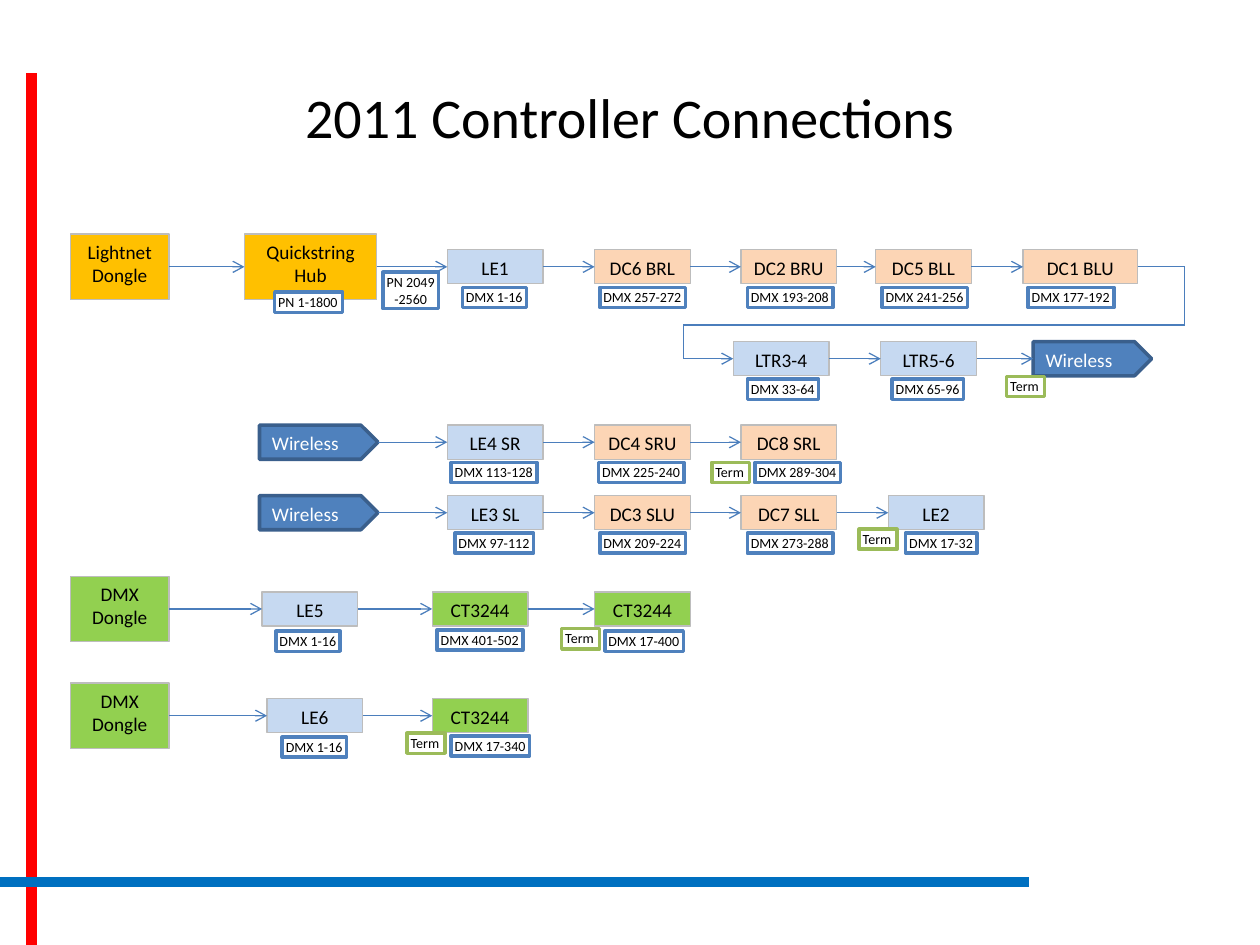
from dataclasses import dataclass
from itertools import pairwise
from typing import Optional

from lxml.etree import SubElement
from pptx import Presentation
from pptx.dml.color import RGBColor as Rgb
from pptx.enum.shapes import MSO_CONNECTOR as Connector, MSO_SHAPE as Preset
from pptx.enum.text import MSO_ANCHOR as Anchor, MSO_AUTO_SIZE as AutoSize, PP_ALIGN as Align
from pptx.oxml.ns import qn
from pptx.util import Pt

COLOURS = {
    "red": "FF0000", "rule": "0070C0", "black": "000000", "white": "FFFFFF",
    "amber": "FFC000", "lime": "92D050", "sky": "C6D9F1", "peach": "FCD5B5",
    "blue": "4F81BD", "navy": "3A5F8C", "grey": "BDBDBD",
    "olive": "9BBB59", "link": "4B7EBC",
}
FONT = "Calibri"
DONGLE_LEFT, FIRST, SECOND, THIRD, FOURTH = 40.3, 255.6, 339.8, 423.4, 507.6
RIGHT_SIDE, LEFT_SIDE = 3, 1


@dataclass
class Node:
    text: str
    left: float
    colour: str
    width: float = 54.7
    height: float = 19.5


@dataclass
class Tag:
    text: str
    left: float
    drop: float = 11.7
    width: Optional[float] = None
    height: float = 11.5


@dataclass
class Row:
    middle: float
    nodes: list[Node]
    tags: list[Tag]


def dongle(text: str, colour: str) -> Node:
    return Node(text, DONGLE_LEFT, colour, 56.2, 37.5)


def wireless(left: float) -> Node:
    return Node("Wireless", left, "blue", 67.7)


def term(left: float, drop: float) -> Tag:
    return Tag("Term", left, drop, 21.6)


ROWS = [
    Row(152.5,
        [dongle("Lightnet\nDongle", "amber"),
         Node("Quickstring\nHub", 139.7, "amber", 75.6, 37.5),
         Node("LE1", FIRST, "sky"), Node("DC6 BRL", SECOND, "peach"),
         Node("DC2 BRU", THIRD, "peach"), Node("DC5 BLL", 500.4, "peach"),
         Node("DC1 BLU", 584.6, "peach", 65.5)],
        [Tag("PN 1-1800", 157, 14.5, 38.9),
         Tag("PN 2049\n-2560", 218.9, 3, 31.7, 20.9),
         Tag("DMX 1-16", 264.2), Tag("DMX 257-272", 342.7),
         Tag("DMX 193-208", 427), Tag("DMX 241-256", 504),
         Tag("DMX 177-192", 587.5)]),
    Row(205,
        [Node("LTR3-4", 419, "sky"), Node("LTR5-6", 503.3, "sky"), wireless(590.4)],
        [Tag("DMX 33-64", 427), Tag("DMX 65-96", 509.8), term(575.3, 10.2)]),
    Row(252.7,
        [wireless(148.3), Node("LE4 SR", FIRST, "sky"),
         Node("DC4 SRU", SECOND, "peach"), Node("DC8 SRL", THIRD, "peach")],
        [Tag("DMX 113-128", 257.8), Tag("DMX 225-240", 342),
         term(406.8, 11.5), Tag("DMX 289-304", 431.3)]),
    Row(293,
        [wireless(148.3), Node("LE3 SL", FIRST, "sky"),
         Node("DC3 SLU", SECOND, "peach"), Node("DC7 SLL", THIRD, "peach"),
         Node("LE2", FOURTH, "sky")],
        [Tag("DMX 97-112", 260), Tag("DMX 209-224", 342.7),
         Tag("DMX 273-288", 427), term(491, 9.4), Tag("DMX 17-32", 517.5)]),
    Row(348,
        [dongle("DMX\nDongle", "lime"), Node("LE5", 149.8, "sky"),
         Node("CT3244", 247, "lime"), Node("CT3244", SECOND, "lime")],
        [Tag("DMX 1-16", 157.7, 12.7), Tag("DMX 401-502", 249.8, 12),
         term(321, 11.3), Tag("DMX 17-400", 345.6, 12.7)]),
    Row(409,
        [dongle("DMX\nDongle", "lime"), Node("LE6", 152.6, "sky"),
         Node("CT3244", 247, "lime")],
        [Tag("DMX 1-16", 161.3, 12.2), term(232.6, 10),
         Tag("DMX 17-340", 257.8, 11.5)]),
]


def rgb(name: str) -> Rgb:
    return Rgb.from_string(COLOURS[name])


def write(shape, text: str, *, size: float, colour: str = "black",
          align=Align.CENTER, anchor=Anchor.TOP) -> None:
    frame = shape.text_frame
    frame.vertical_anchor = anchor
    for index, line in enumerate(text.split("\n")):
        para = frame.add_paragraph() if index else frame.paragraphs[0]
        para.alignment = align
        span = para.add_run()
        span.text = line
        span.font.name = FONT
        span.font.size = Pt(size)
        span.font.color.rgb = rgb(colour)


def draw_box(slide, preset, left: float, top: float, width: float, height: float,
             *, fill: str, edge: str, weight: float):
    box = slide.shapes.add_shape(preset, Pt(left), Pt(top), Pt(width), Pt(height))
    box.shadow.inherit = False
    box.fill.solid()
    box.fill.fore_color.rgb = rgb(fill)
    box.line.color.rgb = rgb(edge)
    box.line.width = Pt(weight)
    return box


def draw_line(slide, start: tuple, end: tuple, *, colour: str = "link",
              weight: float = 0.75, arrow: bool = False):
    line = slide.shapes.add_connector(Connector.STRAIGHT, *map(Pt, start + end))
    line.line.color.rgb = rgb(colour)
    line.line.width = Pt(weight)
    properties = line._element.spPr
    if arrow:
        SubElement(properties.find(qn("a:ln")), qn("a:tailEnd"), type="arrow")
    SubElement(properties, qn("a:effectLst"))
    return line


def draw_node(slide, node: Node, middle: float):
    is_wireless = node.text == "Wireless"
    box = draw_box(slide, Preset.PENTAGON if is_wireless else Preset.RECTANGLE,
                   node.left, middle - node.height / 2, node.width, node.height,
                   fill=node.colour, edge="navy" if is_wireless else "grey",
                   weight=2 if is_wireless else 0.75)
    write(box, node.text, size=11, colour="white" if is_wireless else "black",
          align=Align.LEFT if is_wireless else Align.CENTER)
    return box


def draw_tag(slide, tag: Tag, middle: float) -> None:
    width = tag.width or 4.1 * len(tag.text) + 3.9
    box = draw_box(slide, Preset.RECTANGLE, tag.left, middle + tag.drop, width, tag.height,
                   fill="white", edge="olive" if tag.text == "Term" else "blue", weight=2)
    frame = box.text_frame
    frame.margin_left = frame.margin_right = Pt(2)
    frame.margin_top = frame.margin_bottom = Pt(0.75)
    frame.word_wrap = False
    frame.auto_size = AutoSize.SHAPE_TO_FIT_TEXT
    write(box, tag.text, size=8, align=Align.CENTER if "\n" in tag.text else Align.LEFT)


def draw_chain(slide, row: Row) -> list:
    boxes = [draw_node(slide, node, row.middle) for node in row.nodes]
    for source, target in pairwise(boxes):
        link = draw_line(slide, (0, 0), (1, 1), arrow=True)
        link.begin_connect(source, RIGHT_SIDE)
        link.end_connect(target, LEFT_SIDE)
    return boxes


def draw_return(slide, source, target) -> None:
    right, left, turn = 677, 390.5, 185.8
    top, bottom = ROWS[0].middle, ROWS[1].middle
    points = [(650.1, top), (right, top), (right, turn),
              (left, turn), (left, bottom), (419, bottom)]
    steps = list(pairwise(points))
    lines = [draw_line(slide, *step, arrow=step == steps[-1]) for step in steps]
    lines[0].begin_connect(source, RIGHT_SIDE)
    lines[-1].end_connect(target, LEFT_SIDE)


def main() -> None:
    deck = Presentation()
    deck.slide_width, deck.slide_height = Pt(720), Pt(540)
    page = deck.slides.add_slide(deck.slide_layouts[5])
    draw_line(page, (18, 42), (18, 540), colour="red", weight=6)
    draw_line(page, (0, 504), (588, 504), colour="rule", weight=6)

    title = page.shapes.title
    title.left, title.top, title.width, title.height = map(Pt, (36, 21.6, 648, 90))
    write(title, "2011 Controller Connections", size=32, anchor=Anchor.MIDDLE)

    chains = [draw_chain(page, row) for row in ROWS]
    draw_return(page, chains[0][-1], chains[1][0])
    for row in ROWS:
        for tag in row.tags:
            draw_tag(page, tag, row.middle)
    deck.save("out.pptx")


if __name__ == "__main__":
    main()
